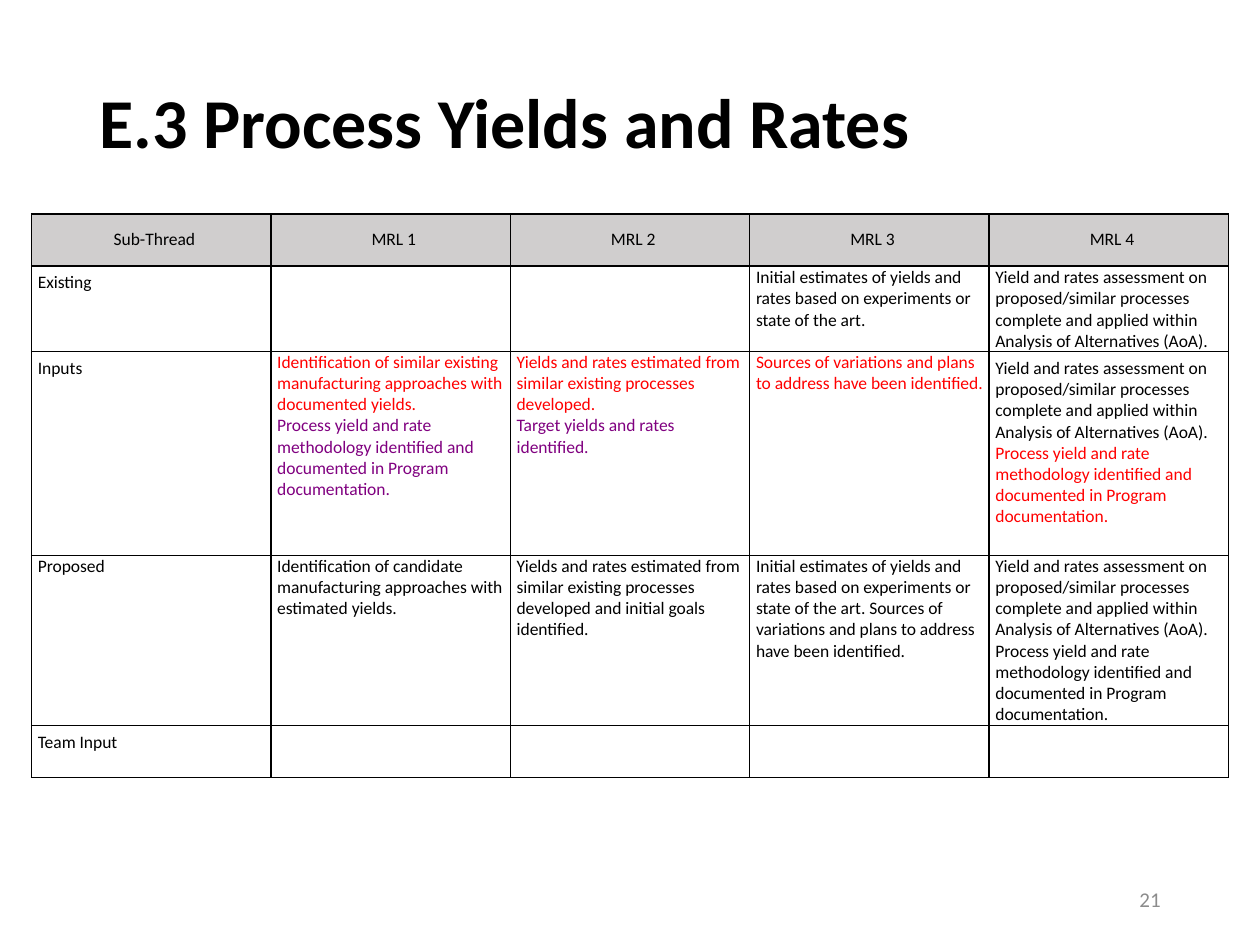
import pptx
import pptx.dml.color
import pptx.enum.text
import pptx.oxml
import pptx.oxml.ns
import pptx.util
from pptx.util import Inches

ALIGN = pptx.enum.text.PP_ALIGN
ANCHOR = pptx.enum.text.MSO_ANCHOR
FONT = "Calibri"
BLACK, RED, PURPLE = "000000", "FF0000", "800080"
HEADER_FILL = "D0CECE"

TIGHT = (0.05, 0, 0, 0)
SNUG = (0.05, 0.01, 0.01, 0)
ROOMY = (0.05, 0.05, 0.1, 0.05)

COLUMN_WIDTH = 1.9
ROW_HEIGHTS = [0.41, 0.68, 1.62, 1.35, 0.41]

ESTIMATES = "Initial estimates of yields and rates based on experiments or state of the art."
VARIATIONS = "Sources of variations and plans to address have been identified."
ASSESSMENT = ("Yield and rates assessment on proposed/similar processes complete "
              "and applied within Analysis of Alternatives (AoA).")
METHODOLOGY = "Process yield and rate methodology identified and documented in Program documentation."

HEADINGS = ["Sub-Thread", "MRL 1", "MRL 2", "MRL 3", "MRL 4"]


def plain(text, insets):
    """Return cell content of one black paragraph."""
    return [[(text, BLACK)]], insets


EMPTY = plain("", ROOMY)
BODY = [
    [plain("Existing", ROOMY), EMPTY, EMPTY, plain(ESTIMATES, SNUG), plain(ASSESSMENT, SNUG)],
    [
        plain("Inputs", ROOMY),
        ([[("Identification of similar existing manufacturing approaches with "
            "documented yields.", RED)],
          [(METHODOLOGY, PURPLE)]], TIGHT),
        ([[("Yields and rates estimated from similar existing processes developed.", RED)],
          [("Target yields and rates identified.", PURPLE)]], TIGHT),
        ([[(VARIATIONS, RED)]], TIGHT),
        ([[(ASSESSMENT + " ", BLACK), (METHODOLOGY, RED)]], ROOMY),
    ],
    [
        plain("Proposed", TIGHT),
        plain("Identification of candidate manufacturing approaches with estimated yields.", TIGHT),
        plain("Yields and rates estimated from similar existing processes developed "
              "and initial goals identified.", TIGHT),
        plain(f"{ESTIMATES} {VARIATIONS}", TIGHT),
        plain(f"{ASSESSMENT} {METHODOLOGY}", TIGHT),
    ],
    [plain("Team Input", ROOMY)] + [EMPTY] * 4,
]


def rgb(value):
    """Turn a hex string into a colour."""
    return pptx.dml.color.RGBColor.from_string(value)


def style_font(font, size, color, bold=False):
    """Set typeface, size, colour and weight."""
    font.name = FONT
    font.size = pptx.util.Pt(size)
    font.bold = bold
    font.color.rgb = rgb(color)


def add_label(slide, text, box, size, color, align=ALIGN.LEFT, bold=False):
    """Add one line of vertically centred text."""
    frame = slide.shapes.add_textbox(*map(Inches, box)).text_frame
    frame.word_wrap = True
    frame.vertical_anchor = ANCHOR.MIDDLE
    line = frame.paragraphs[0]
    line.text = text
    line.alignment = align
    line.line_spacing = 0.9
    style_font(line.font, size, color, bold)


def add_borders(cell):
    """Outline a cell with thin black lines."""
    properties = cell._tc.get_or_add_tcPr()
    for side in ("lnL", "lnR", "lnT", "lnB"):
        properties.append(pptx.oxml.parse_xml(
            f'<a:{side} {pptx.oxml.ns.nsdecls("a")} w="{pptx.util.Pt(1)}">'
            f'<a:solidFill><a:srgbClr val="{BLACK}"/></a:solidFill></a:{side}>'))


def fill_cell(cell, paragraphs, insets, align=ALIGN.LEFT, anchor=ANCHOR.TOP, fill=None):
    """Write coloured paragraphs into a bordered cell."""
    add_borders(cell)
    if fill:
        cell.fill.solid()
        cell.fill.fore_color.rgb = rgb(fill)
    else:
        cell.fill.background()
    cell.margin_left, cell.margin_top, cell.margin_right, cell.margin_bottom = map(Inches, insets)
    cell.vertical_anchor = anchor
    frame = cell.text_frame
    for index, parts in enumerate(paragraphs):
        paragraph = frame.paragraphs[0] if index == 0 else frame.add_paragraph()
        paragraph.alignment = align
        style_font(paragraph.font, 10, parts[0][1])
        for text, color in parts:
            if text:
                run = paragraph.add_run()
                run.text = text
                if color != parts[0][1]:
                    run.font.color.rgb = rgb(color)


def add_maturity_table(slide):
    """Add the table of yield criteria by readiness level."""
    table = slide.shapes.add_table(
        len(ROW_HEIGHTS), len(HEADINGS), Inches(0.25), Inches(1.7),
        Inches(COLUMN_WIDTH * len(HEADINGS)), Inches(sum(ROW_HEIGHTS))).table
    table.first_row = table.horz_banding = False
    for column in table.columns:
        column.width = Inches(COLUMN_WIDTH)
    for row, height in zip(table.rows, ROW_HEIGHTS):
        row.height = Inches(height)
    for column, heading in enumerate(HEADINGS):
        fill_cell(table.cell(0, column), *plain(heading, TIGHT),
                  align=ALIGN.CENTER, anchor=ANCHOR.MIDDLE, fill=HEADER_FILL)
    for row, contents in enumerate(BODY, start=1):
        for column, content in enumerate(contents):
            fill_cell(table.cell(row, column), *content)


def main():
    """Build and save the slide."""
    deck = pptx.Presentation()
    deck.slide_width, deck.slide_height = Inches(10), Inches(7.5)
    slide = deck.slides.add_slide(deck.slide_layouts[6])
    add_label(slide, "E.3 Process Yields and Rates", (0.69, 0.4, 8.62, 1.2), 40, BLACK, bold=True)
    add_maturity_table(slide)
    add_label(slide, "21", (7.06, 6.95, 2.25, 0.4), 12, "8C8C8C", align=ALIGN.RIGHT)
    deck.save("out.pptx")


if __name__ == "__main__":
    main()
